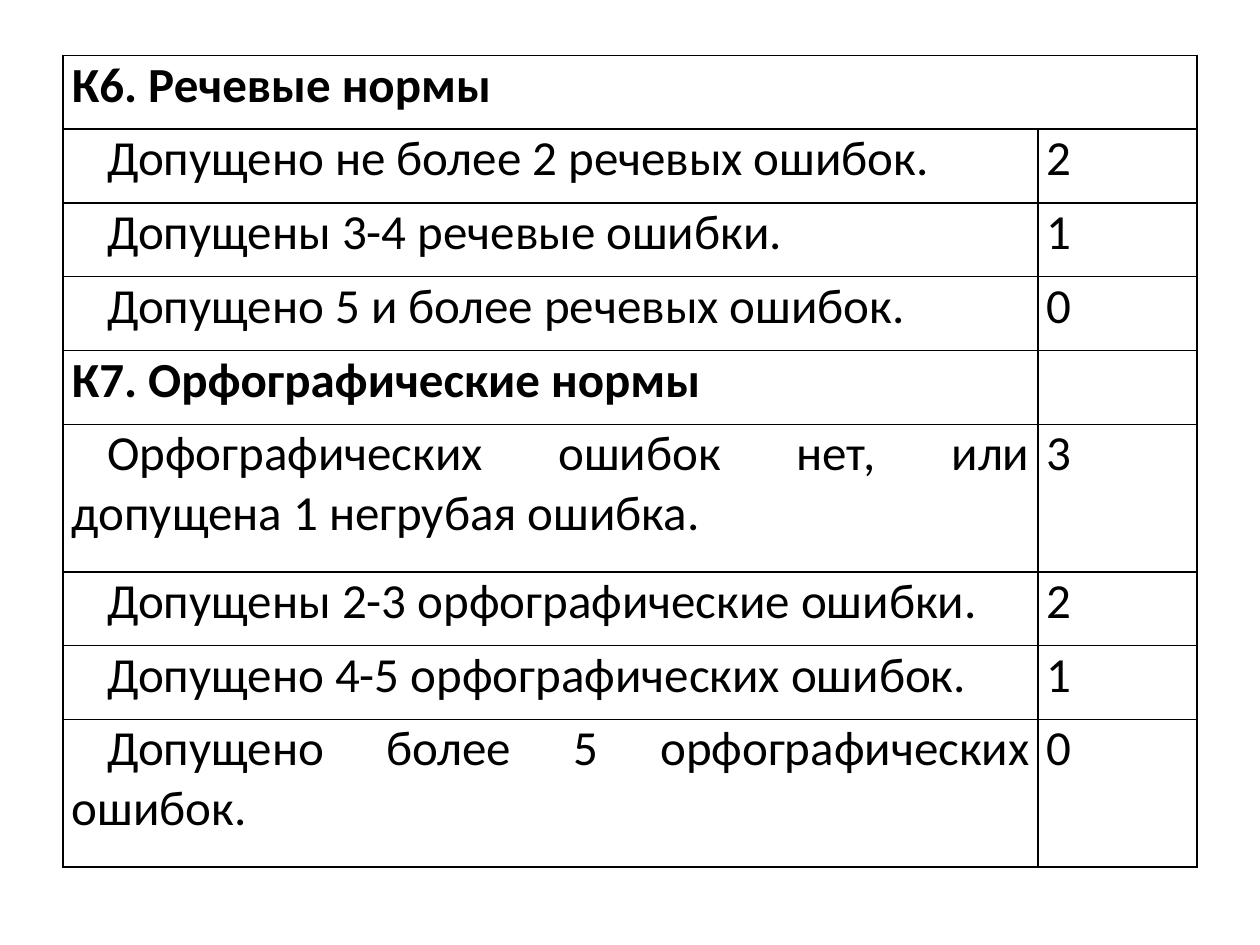
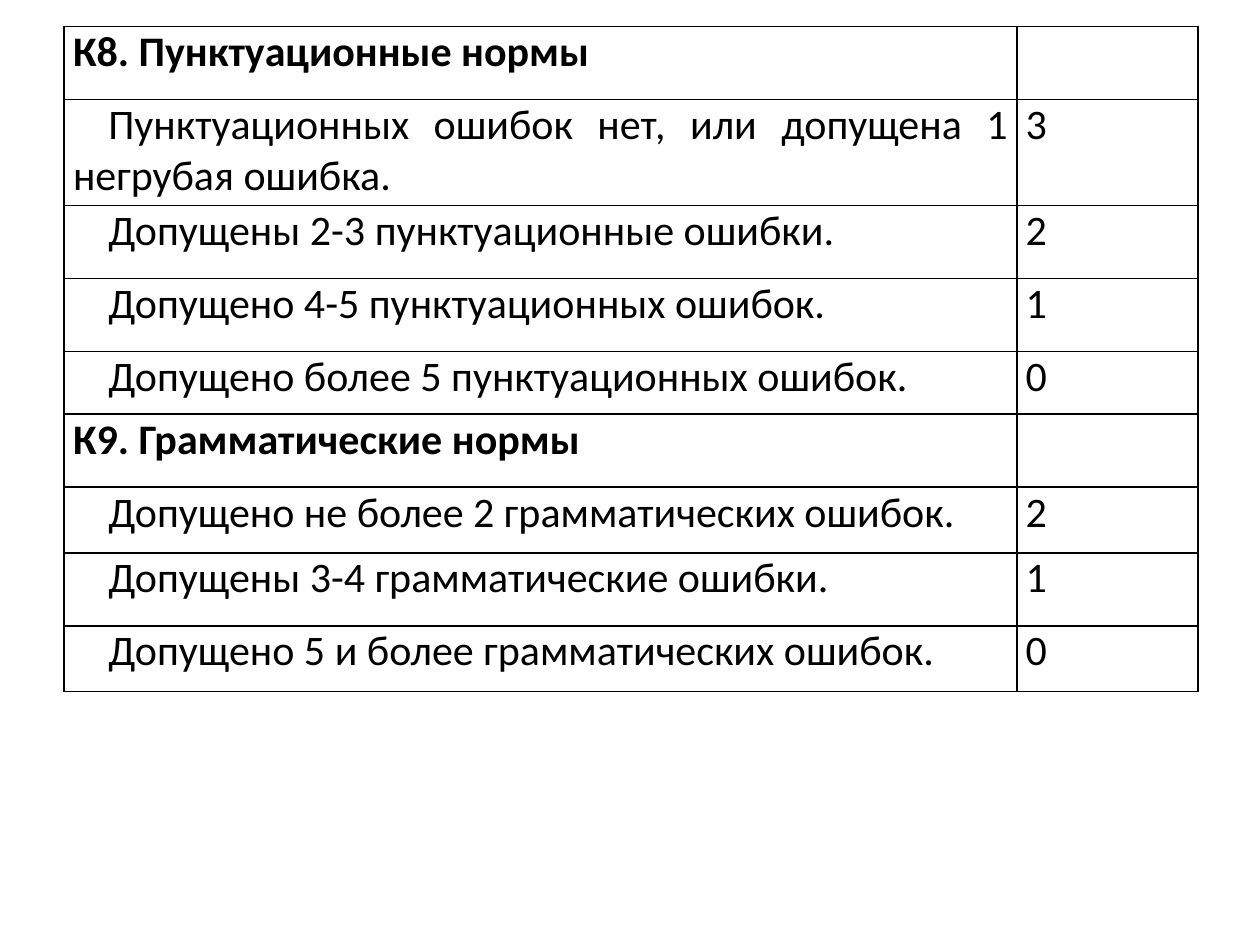
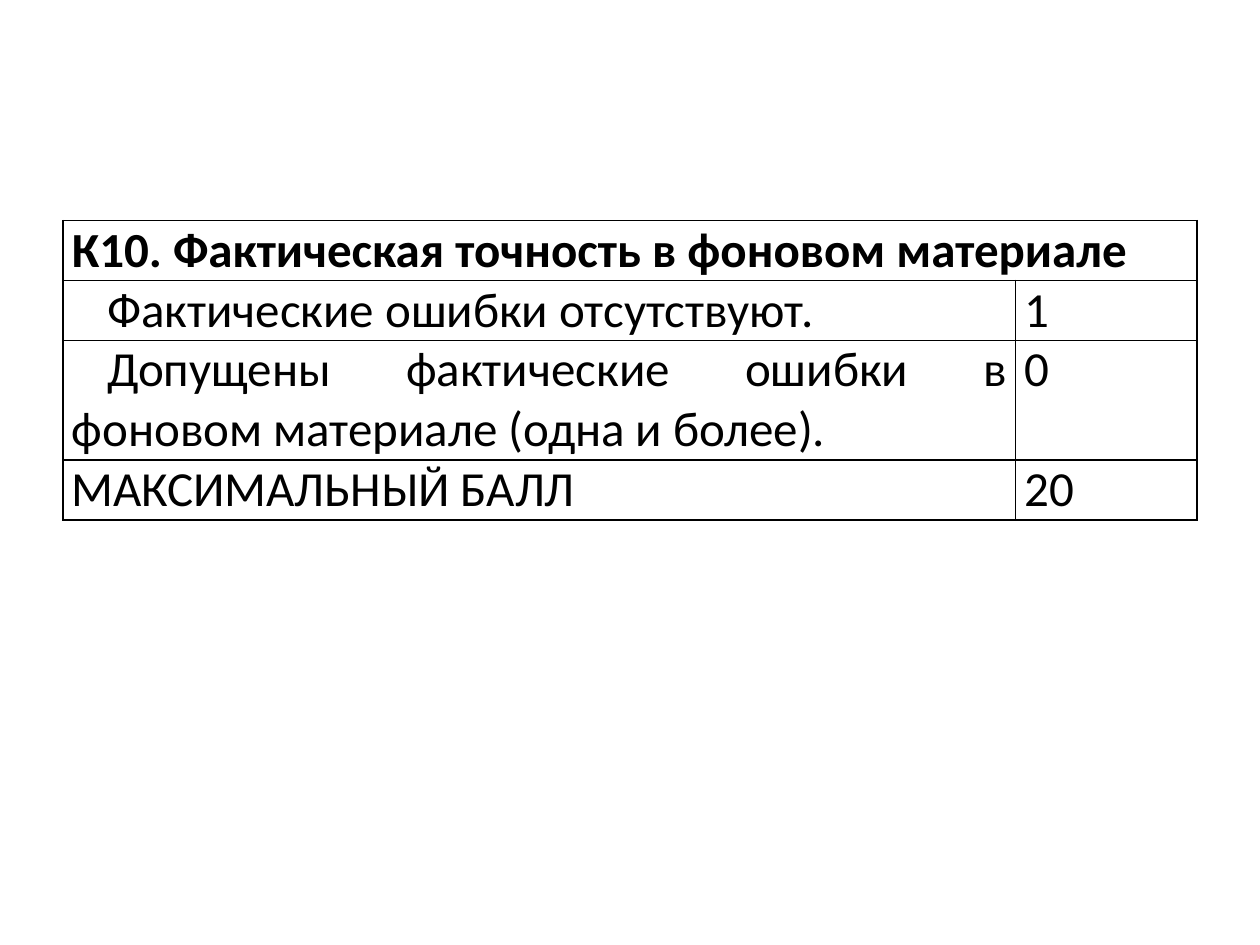
from lxml.etree import SubElement
from pptx import Presentation
from pptx.dml.color import RGBColor
from pptx.enum.text import PP_ALIGN
from pptx.oxml.ns import qn
from pptx.util import Inches, Pt

INK = RGBColor(0x00, 0x00, 0x00)
SLIDE_WIDTH, SLIDE_HEIGHT = Inches(10), Inches(7.5)
TABLE_WIDTH = Inches(9)
FIRST_LINE_INDENT = Inches(0.28)
BORDER_WIDTH = Pt(1)
CELL_FORMAT = {"margin_left": Inches(0.07), "margin_right": Inches(0.07),
               "margin_top": 0, "margin_bottom": 0}
TABLE_FORMAT = {"first_row": False, "horz_banding": False}
TITLE, HEADING, GRADE, TOTAL = "title", "heading", "grade", "total"

SPEECH_AND_SPELLING = [
    (TITLE, "К6. Речевые нормы", "", 1),
    (GRADE, "Допущено не более 2 речевых ошибок.", "2", 1),
    (GRADE, "Допущены 3-4 речевые ошибки.", "1", 1),
    (GRADE, "Допущено 5 и более речевых ошибок.", "0", 1),
    (HEADING, "К7. Орфографические нормы", "", 1),
    (GRADE, "Орфографических ошибок нет, или допущена 1 негрубая ошибка.", "3", 2),
    (GRADE, "Допущены 2-3 орфографические ошибки.", "2", 1),
    (GRADE, "Допущено 4-5 орфографических ошибок.", "1", 1),
    (GRADE, "Допущено более 5 орфографических ошибок.", "0", 2),
]
PUNCTUATION_AND_GRAMMAR = [
    (HEADING, "К8. Пунктуационные нормы", "", 1),
    (GRADE, "Пунктуационных ошибок нет, или допущена 1 негрубая ошибка.", "3", 1.45),
    (GRADE, "Допущены 2-3 пунктуационные ошибки.", "2", 1),
    (GRADE, "Допущено 4-5 пунктуационных ошибок.", "1", 1),
    (GRADE, "Допущено более 5 пунктуационных ошибок.", "0", 0.86),
    (HEADING, "К9. Грамматические нормы", "", 1),
    (GRADE, "Допущено не более 2 грамматических ошибок.", "2", 0.9),
    (GRADE, "Допущены 3-4 грамматические ошибки.", "1", 1),
    (GRADE, "Допущено 5 и более грамматических ошибок.", "0", 0.9),
]
FACTUAL_ACCURACY = [
    (TITLE, "К10. Фактическая точность в фоновом материале", "", 1),
    (GRADE, "Фактические ошибки отсутствуют.", "1", 1),
    (GRADE, "Допущены фактические ошибки в фоновом материале (одна и более).", "0", 2),
    (TOTAL, "МАКСИМАЛЬНЫЙ БАЛЛ", "20", 1),
]


def apply(target, values):
    """Set every attribute named in values on the target."""
    for name, value in values.items():
        setattr(target, name, value)


def frame_cell(cell):
    """Give a cell its margins, four borders and no fill."""
    apply(cell, CELL_FORMAT)
    properties = cell._tc.get_or_add_tcPr()
    for side in ("lnL", "lnR", "lnT", "lnB"):
        line = SubElement(properties, qn(f"a:{side}"), w=str(BORDER_WIDTH))
        fill = SubElement(line, qn("a:solidFill"))
        SubElement(fill, qn("a:srgbClr"), val=str(INK))
    cell.fill.background()


def write_cell(cell, text, size, bold=False, indent=0):
    """Write one justified paragraph with an optional first-line indent."""
    para = cell.text_frame.paragraphs[0]
    para.alignment = PP_ALIGN.JUSTIFY
    para._p.get_or_add_pPr().set("indent", str(indent))
    span = para.add_run()
    span.text = text
    apply(span.font, {"name": "Calibri", "size": Pt(size), "bold": bold})
    span.font.color.rgb = INK


def add_criteria_table(page, criteria, left, top, height, label_share, size):
    """Add a table of criteria whose row heights share out its height."""
    table = page.shapes.add_table(len(criteria), 2, left, top,
                                  TABLE_WIDTH, height).table
    apply(table, TABLE_FORMAT)
    for column, share in zip(table.columns, (label_share, 1 - label_share)):
        column.width = round(TABLE_WIDTH * share)
    unit = height / sum(share for *_, share in criteria)
    for index, (kind, label, score, share) in enumerate(criteria):
        table.rows[index].height = round(unit * share)
        label_cell, score_cell = table.cell(index, 0), table.cell(index, 1)
        for cell in (label_cell, score_cell):
            frame_cell(cell)
        write_cell(label_cell, label, size, bold=kind in (TITLE, HEADING),
                   indent=FIRST_LINE_INDENT if kind == GRADE else 0)
        if score:
            write_cell(score_cell, score, size)
        if kind == TITLE:
            label_cell.merge(score_cell)


def main():
    """Build the three pages of grading criteria."""
    deck = Presentation()
    apply(deck, {"slide_width": SLIDE_WIDTH, "slide_height": SLIDE_HEIGHT})
    tables = [
        (SPEECH_AND_SPELLING, 0.5, 0.44, 6.44, 0.86, 28),
        (PUNCTUATION_AND_GRAMMAR, 0.51, 0.21, 5.28, 0.84, 24),
        (FACTUAL_ACCURACY, 0.5, 1.75, 2.37, 0.84, 28),
    ]
    for criteria, left, top, height, label_share, size in tables:
        page = deck.slides.add_slide(deck.slide_layouts[6])
        add_criteria_table(page, criteria, Inches(left), Inches(top),
                           Inches(height), label_share, size)
    deck.save("out.pptx")


if __name__ == "__main__":
    main()
